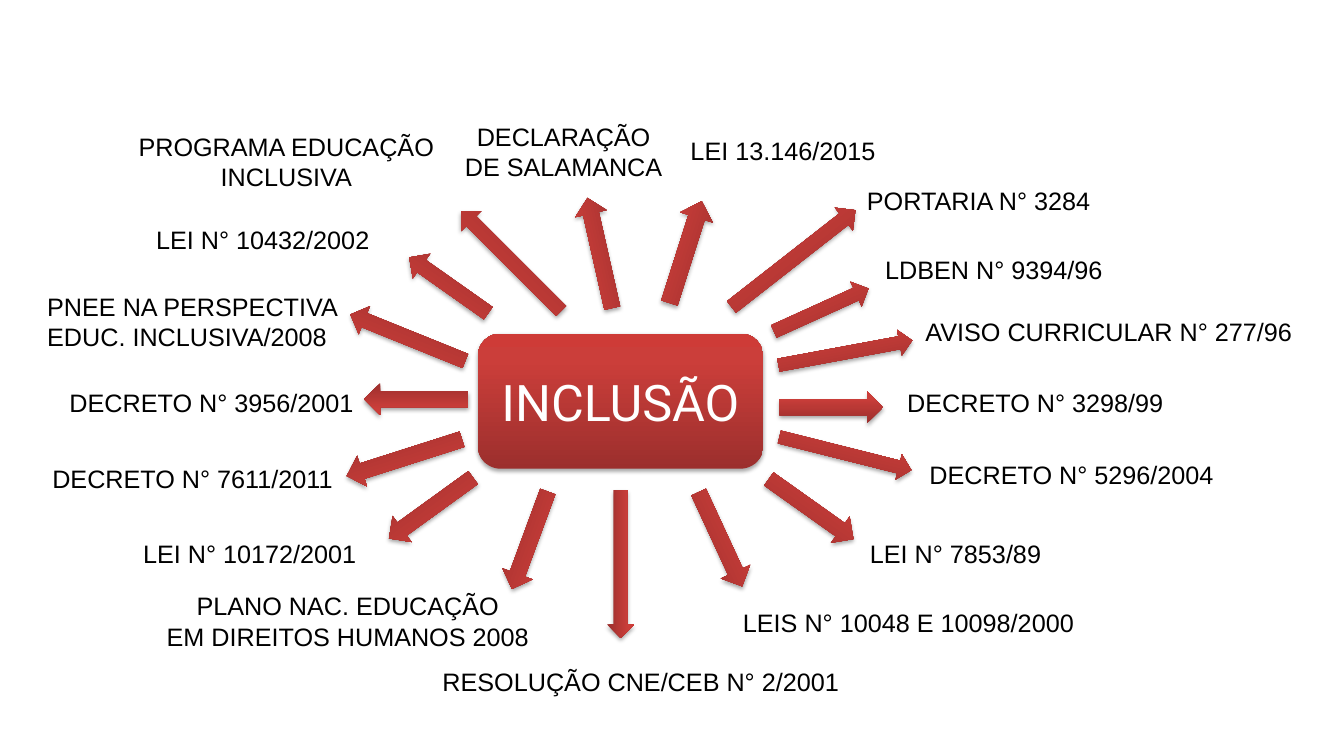
from dataclasses import dataclass

from lxml.etree import SubElement
from pptx import Presentation
from pptx.dml.color import RGBColor
from pptx.enum.shapes import MSO_SHAPE
from pptx.enum.text import MSO_ANCHOR, PP_ALIGN
from pptx.oxml.ns import qn
from pptx.util import Inches, Pt


@dataclass(frozen=True)
class Theme:
    gradient: tuple = ((0, "9C2F2D"), (80, "CB3E3A"), (100, "CE3B37"))
    shadow: str = "000000"
    ink: str = "000000"
    light: str = "FFFFFF"
    hub_font: str = "Roboto"
    label_font: str = "Arial"
    hub_size: int = 36
    label_size: int = 18


class RadialPage:
    def __init__(self, page, theme):
        self.page = page
        self.theme = theme

    def set_text(self, frame, lines, font, size, color, align):
        for index, line in enumerate(lines):
            para = frame.paragraphs[0] if index == 0 else frame.add_paragraph()
            para.text = line
            para.alignment = align
            para.font.name = font
            para.font.size = Pt(size)
            para.font.color.rgb = RGBColor.from_string(color)

    def red_shape(self, kind, left, top, width, height):
        shape = self.page.shapes.add_shape(
            kind, Inches(left), Inches(top), Inches(width), Inches(height))
        shape.line.fill.background()
        shape.fill.gradient()
        shape.fill.gradient_angle = 90
        properties = shape._element.spPr
        stops = properties.find(qn("a:gradFill")).find(qn("a:gsLst"))
        for stop in list(stops):
            stops.remove(stop)
        for percent, color in self.theme.gradient:
            stop = SubElement(stops, qn("a:gs"), pos=str(percent * 1000))
            SubElement(stop, qn("a:srgbClr"), val=color)
        shape.shadow.inherit = False
        effects = properties.find(qn("a:effectLst"))
        shadow = SubElement(effects, qn("a:outerShdw"), blurRad=str(Pt(3.1)),
                            dist=str(Pt(1.8)), dir="5400000", rotWithShape="0")
        color = SubElement(shadow, qn("a:srgbClr"), val=self.theme.shadow)
        SubElement(color, qn("a:alpha"), val="35000")
        return shape

    def hub(self, text, left, top, width, height):
        shape = self.red_shape(MSO_SHAPE.FLOWCHART_ALTERNATE_PROCESS,
                               left, top, width, height)
        shape.text_frame.vertical_anchor = MSO_ANCHOR.MIDDLE
        self.set_text(shape.text_frame, [text], self.theme.hub_font,
                      self.theme.hub_size, self.theme.light, PP_ALIGN.CENTER)

    def arrow(self, left, top, width, height, angle):
        shape = self.red_shape(MSO_SHAPE.RIGHT_ARROW, left, top, width, height)
        shape.rotation = angle

    def label(self, left, top, width, *lines):
        centred = len(lines) > 1 and left > 1
        height = 0.4 if len(lines) == 1 else 0.71
        box = self.page.shapes.add_textbox(
            Inches(left), Inches(top), Inches(width), Inches(height))
        box.text_frame.word_wrap = len(lines) > 1
        self.set_text(box.text_frame, lines, self.theme.label_font,
                      self.theme.label_size, self.theme.ink,
                      PP_ALIGN.CENTER if centred else PP_ALIGN.LEFT)


LABELS = [
    (4.5, 1.15, 2.18, "DECLARAÇÃO", "DE SALAMANCA"),
    (6.75, 1.29, 2.09, "LEI 13.146/2015"),
    (8.5, 1.79, 2.44, "PORTARIA N° 3284"),
    (8.68, 2.47, 2.39, "LDBEN N° 9394/96"),
    (9.08, 3.09, 3.88, "AVISO CURRICULAR N° 277/96"),
    (8.9, 3.79, 2.77, "DECRETO N° 3298/99"),
    (9.12, 4.51, 3.05, "DECRETO N° 5296/2004"),
    (8.53, 5.29, 1.97, "LEI N° 7853/89"),
    (7.27, 5.98, 3.55, "LEIS N° 10048 E 10098/2000"),
    (4.29, 6.56, 4.26, "RESOLUÇÃO CNE/CEB N° 2/2001"),
    (1.28, 5.81, 4.34, "PLANO NAC. EDUCAÇÃO", "EM DIREITOS HUMANOS 2008"),
    (1.32, 5.29, 2.38, "LEI N° 10172/2001"),
    (0.42, 4.55, 3.01, "DECRETO N° 7611/2011"),
    (0.59, 3.79, 3.05, "DECRETO N° 3956/2001"),
    (0.37, 2.84, 3.64, "PNEE NA PERSPECTIVA", "EDUC. INCLUSIVA/2008"),
    (1.45, 2.18, 2.41, "LEI N° 10432/2002"),
    (1.1, 1.25, 3.48, "PROGRAMA EDUCAÇÃO", "INCLUSIVA"),
]

ARROWS = [
    (5.39, 2.35, 1.12, 0.32, 257.3),
    (6.27, 2.33, 1.06, 0.34, 287.6),
    (7.09, 2.42, 1.56, 0.29, 322),
    (7.63, 2.94, 1.03, 0.27, 335.6),
    (7.71, 3.37, 1.35, 0.26, 349.5),
    (7.73, 3.88, 1.03, 0.32, 0),
    (7.71, 4.37, 1.35, 0.26, 14.1),
    (7.53, 4.89, 1.03, 0.32, 35.4),
    (6.63, 5.19, 1.03, 0.32, 65.2),
    (5.42, 5.46, 1.47, 0.27, 90),
    (4.74, 5.2, 1.03, 0.32, 110.2),
    (3.76, 4.88, 1.03, 0.32, 144.1),
    (3.41, 4.38, 1.2, 0.32, 162.3),
    (3.61, 3.8, 1.03, 0.32, 180),
    (3.43, 3.2, 1.23, 0.3, 202),
    (3.97, 2.68, 0.96, 0.3, 215.2),
    (4.37, 2.45, 1.4, 0.28, 225),
]


def main():
    deck = Presentation()
    deck.slide_width = Inches(13.33)
    deck.slide_height = Inches(7.5)
    radial = RadialPage(deck.slides.add_slide(deck.slide_layouts[6]), Theme())
    radial.hub("INCLUSÃO", 4.74, 3.31, 2.83, 1.34)
    for label in LABELS:
        radial.label(*label)
    for arrow in ARROWS:
        radial.arrow(*arrow)
    deck.save("out.pptx")


if __name__ == "__main__":
    main()
